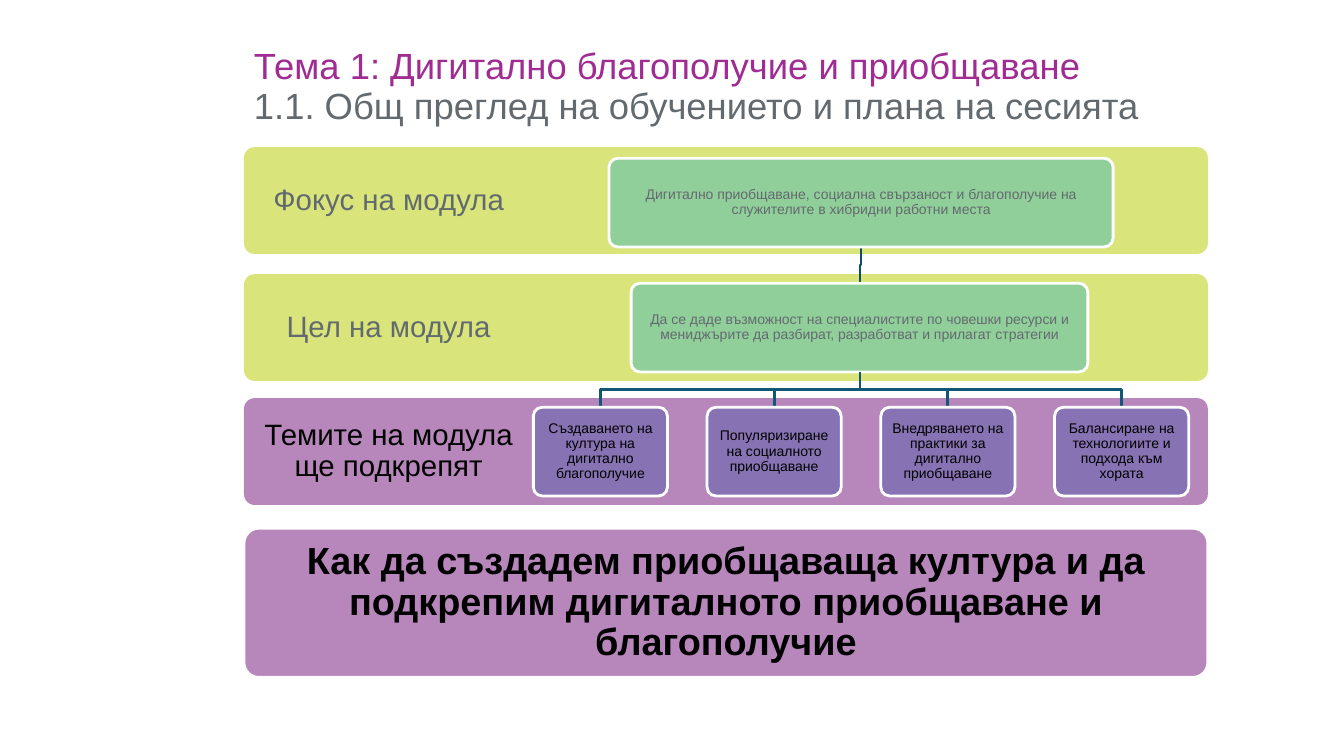
import pptx
import pptx.dml.color
import pptx.enum.shapes
import pptx.enum.text
import pptx.util

Inches = pptx.util.Inches
Pt = pptx.util.Pt
ALIGN = pptx.enum.text.PP_ALIGN
ANCHOR = pptx.enum.text.MSO_ANCHOR

GREY = "636A6F"
BLACK = "000000"
WHITE = "FFFFFF"
MAGENTA = "A02B93"
LIME = "D9E47B"
MAUVE = "B787BC"
GREEN = "91CF9A"
VIOLET = "8772B3"


def color(value):
    return pptx.dml.color.RGBColor.from_string(value)


class SlideBuilder:
    font = "Arial"
    line_spacing = 0.9
    corner = 0.1
    line_width = 2

    def __init__(self, deck):
        self.page = deck.slides.add_slide(deck.slide_layouts[6])

    def add_text(self, shape, lines, size, margins, align, anchor, bold=False):
        frame = shape.text_frame
        frame.word_wrap = True
        frame.vertical_anchor = anchor
        frame.margin_left = frame.margin_right = Inches(margins[0])
        frame.margin_top = frame.margin_bottom = Inches(margins[1])
        for index, (text, ink) in enumerate(lines):
            para = frame.add_paragraph() if index else frame.paragraphs[0]
            para.alignment = align
            para.line_spacing = self.line_spacing
            span = para.add_run()
            span.text = text
            span.font.name = self.font
            span.font.size = Pt(size)
            span.font.bold = bold
            span.font.color.rgb = color(ink)

    def title(self, left, top, width, height, lines):
        box = self.page.shapes.add_textbox(*map(Inches, (left, top, width, height)))
        self.add_text(box, lines, 26, (0.1, 0.05), ALIGN.LEFT, ANCHOR.TOP)

    def label(self, left, top, width, height, text, ink):
        box = self.page.shapes.add_textbox(*map(Inches, (left, top, width, height)))
        self.add_text(box, [(text, ink)], 21, (0.16, 0.16), ALIGN.CENTER, ANCHOR.MIDDLE)

    def panel(self, left, top, width, height, fill, outline=None):
        shape = self.page.shapes.add_shape(
            pptx.enum.shapes.MSO_SHAPE.ROUNDED_RECTANGLE,
            *map(Inches, (left, top, width, height)))
        shape.adjustments[0] = self.corner
        shape.shadow.inherit = False
        shape.fill.solid()
        shape.fill.fore_color.rgb = color(fill)
        if outline:
            shape.line.color.rgb = color(outline)
            shape.line.width = Pt(self.line_width)
        else:
            shape.line.fill.background()
        return shape

    def card(self, left, top, width, height, fill, text, ink, size=10, margin=0.07, bold=False):
        shape = self.panel(left, top, width, height, fill, WHITE)
        self.add_text(shape, [(text, ink)], size, (margin, margin),
                      ALIGN.CENTER, ANCHOR.MIDDLE, bold)

    def elbow(self, start, end, ink):
        middle = (start[1] + end[1]) / 2
        route = [start, (start[0], middle), (end[0], middle), end]
        points = [(Inches(x), Inches(y)) for x, y in route]
        builder = self.page.shapes.build_freeform(*points[0])
        builder.add_line_segments(points[1:], close=False)
        shape = builder.convert_to_shape()
        shape.shadow.inherit = False
        shape.fill.background()
        shape.line.color.rgb = color(ink)
        shape.line.width = Pt(self.line_width)


def main():
    deck = pptx.Presentation()
    deck.slide_width = Inches(13.33)
    deck.slide_height = Inches(7.5)
    slide = SlideBuilder(deck)

    slide.title(2.42, 0.43, 10.78, 1.02, [
        ("Тема 1: Дигитално благополучие и приобщаване", MAGENTA),
        ("1.1. Общ преглед на обучението и плана на сесията", GREY),
    ])

    band_left, band_width, band_height = 2.42, 9.56, 1.06
    bands = [
        (1.46, LIME, "Фокус на модула", GREY),
        (2.72, LIME, "Цел на модула", GREY),
        (3.95, MAUVE, "Темите на модула ще подкрепят", BLACK),
    ]
    for top, fill, text, ink in bands:
        slide.panel(band_left, top, band_width, band_height, fill)
        slide.label(band_left, top, 2.87, band_height, text, ink)

    card_height = 0.88
    focus_top, goal_top, topic_top = 1.57, 2.81, 4.04
    goal_center = 8.53
    goal_bottom = goal_top + card_height
    slide.elbow((8.54, focus_top + card_height), (goal_center, goal_top), "114D68")
    slide.card(6.04, focus_top, 5, card_height, GREEN,
               "Дигитално приобщаване, социална свързаност и благополучие "
               "на служителите в хибридни работни места", GREY)
    slide.card(6.26, goal_top, 4.53, card_height, GREEN,
               "Да се даде възможност на специалистите по човешки ресурси и "
               "мениджърите да разбират, разработват и прилагат стратегии", GREY)

    topics = [
        "Създаването на култура на дигитално благополучие",
        "Популяризиране на социалното приобщаване",
        "Внедряването на практики за дигитално приобщаване",
        "Балансиране на технологиите и подхода към хората",
    ]
    topic_left, topic_right, topic_width = 5.29, 10.46, 1.33
    topic_step = (topic_right - topic_left) / (len(topics) - 1)
    for index, text in enumerate(topics):
        left = topic_left + index * topic_step
        slide.elbow((goal_center, goal_bottom), (left + topic_width / 2, topic_top), "135776")
        slide.card(left, topic_top, topic_width, card_height, VIOLET, text, BLACK)

    slide.card(band_left, 5.24, band_width, 1.48, MAUVE,
               "Как да създадем приобщаваща култура и да подкрепим "
               "дигиталното приобщаване и благополучие", BLACK,
               size=27, margin=0.15, bold=True)

    deck.save("out.pptx")


if __name__ == "__main__":
    main()
